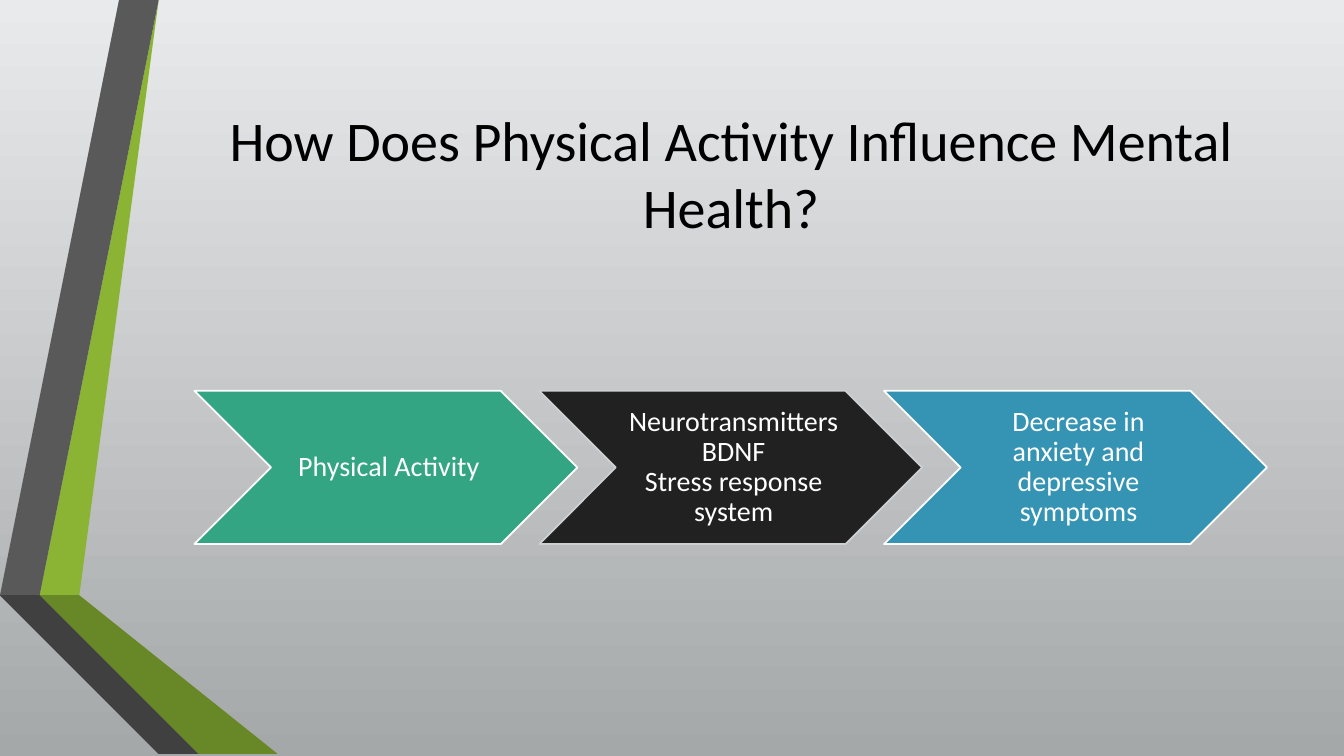
import pptx
import pptx.util
import pptx.dml.color
import pptx.enum.shapes
import pptx.enum.text
import pptx.slide
import pptx.text.text
from dataclasses import dataclass

Cm = pptx.util.Cm
Pt = pptx.util.Pt


@dataclass(frozen=True)
class Theme:
    font: str = "Calibri"
    head: int = 40
    body: int = 20
    ink: str = "000000"
    pale: str = "FFFFFF"
    sky: tuple[str, str] = ("E9EAEB", "A5A8A9")
    lime: str = "8BB434"
    moss: str = "688727"
    fern: str = "465A1A"
    ash: str = "595959"
    coal: str = "404040"
    soot: str = "262626"
    jade: str = "33A583"
    night: str = "212121"
    blue: str = "3594B4"
    mist: str = "CDD0D1"


@dataclass(frozen=True)
class Band:
    fill: str
    dots: list[tuple[float, float]]


@dataclass(frozen=True)
class Step:
    text: str
    fill: str
    edge: str


THEME = Theme()
LEFT, TOP, WIDE, HIGH, PITCH = 4.9, 9.85, 9.65, 3.86, 8.69
FOOT = 19.05

BANDS = [
    Band(THEME.lime, [(1.27, 14.68), (1.96, 14.81), (4.39, 0), (3.68, 0)]),
    Band(THEME.ash, [(3.53, 0), (2.82, 0), (0.41, 14.55), (1.12, 14.66)]),
    Band(THEME.soot, [(0.41, 14.55), (3.68, FOOT), (3.84, FOOT)]),
    Band(THEME.fern, [(1.27, 14.71), (5.28, FOOT), (5.44, FOOT)]),
    Band(THEME.moss, [(1.27, 14.68), (5.44, FOOT), (7.19, FOOT), (1.96, 14.81)]),
    Band(THEME.coal, [(5.13, FOOT), (1.22, 14.81), (1.12, 14.66), (0.41, 14.55), (3.84, FOOT)]),
]

STEPS = [
    Step("Physical Activity", THEME.jade, THEME.pale),
    Step("Neurotransmitters\nBDNF\nStress response system", THEME.night, THEME.mist),
    Step("Decrease in anxiety and depressive symptoms", THEME.blue, THEME.pale),
]


def tint(code: str) -> pptx.dml.color.RGBColor:
    return pptx.dml.color.RGBColor.from_string(code)


def write(frame: pptx.text.text.TextFrame, text: str, size: int, color: str) -> None:
    frame.word_wrap = True
    frame.vertical_anchor = pptx.enum.text.MSO_ANCHOR.MIDDLE
    para = frame.paragraphs[0]
    para.text = text
    para.alignment = pptx.enum.text.PP_ALIGN.CENTER
    for run in para.runs:
        run.font.name = THEME.font
        run.font.size = Pt(size)
        run.font.color.rgb = tint(color)


def paint(slide: pptx.slide.Slide) -> None:
    fill = slide.background.fill
    fill.gradient()
    fill.gradient_angle = 270
    for stop, code, place in zip(fill.gradient_stops, THEME.sky, (0, 1)):
        stop.color.rgb = tint(code)
        stop.position = place


def draw_band(slide: pptx.slide.Slide, band: Band) -> None:
    start, *rest = band.dots
    pen = slide.shapes.build_freeform(*start, scale=Cm(1))
    pen.add_line_segments(rest, close=True)
    shape = pen.convert_to_shape()
    shape.shadow.inherit = False
    shape.fill.solid()
    shape.fill.fore_color.rgb = tint(band.fill)
    shape.line.fill.background()


def draw_title(slide: pptx.slide.Slide, text: str) -> None:
    box = slide.shapes.add_textbox(Cm(4.9), Cm(1.9), Cm(27.05), Cm(4.88))
    write(box.text_frame, text, THEME.head, THEME.ink)


def draw_step(slide: pptx.slide.Slide, step: Step, index: int) -> None:
    shape = slide.shapes.add_shape(
        pptx.enum.shapes.MSO_SHAPE.CHEVRON,
        Cm(LEFT + index * PITCH), Cm(TOP), Cm(WIDE), Cm(HIGH),
    )
    shape.shadow.inherit = False
    shape.fill.solid()
    shape.fill.fore_color.rgb = tint(step.fill)
    shape.line.color.rgb = tint(step.edge)
    shape.line.width = Pt(1.25)
    frame = shape.text_frame
    frame.margin_left = Cm(0.23)
    frame.margin_right = frame.margin_top = frame.margin_bottom = Cm(0.08)
    write(frame, step.text, THEME.body, THEME.pale)
    frame.paragraphs[0].line_spacing = 0.9


def main() -> None:
    deck = pptx.Presentation()
    deck.slide_width, deck.slide_height = Cm(33.87), Cm(FOOT)
    slide = deck.slides.add_slide(deck.slide_layouts[6])
    paint(slide)
    for band in BANDS:
        draw_band(slide, band)
    draw_title(slide, "How Does Physical Activity Influence Mental Health?")
    for index, step in enumerate(STEPS):
        draw_step(slide, step, index)
    deck.save("out.pptx")


if __name__ == "__main__":
    main()
